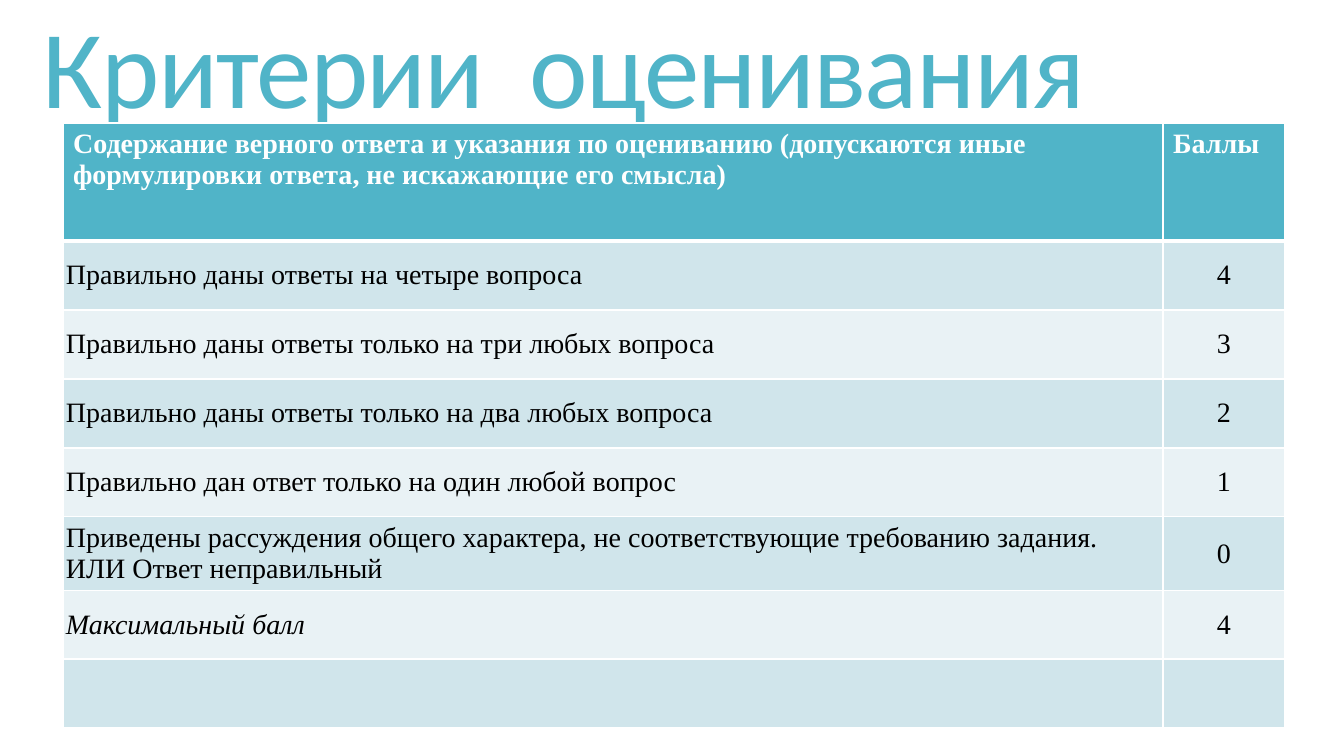
import pptx
import pptx.dml.color
import pptx.enum.text
import pptx.oxml.ns
import pptx.util
import lxml.etree

SCALE = 9071
COLORS = {
    "accent": "50B4C8",
    "band_dark": "D0E5EB",
    "band_light": "E9F2F5",
    "white": "FFFFFF",
    "black": "000000",
}
HEADERS = [
    "Содержание верного ответа и указания по оцениванию "
    "(допускаются иные формулировки ответа, не искажающие его смысла)",
    "Баллы",
]
CRITERIA = [
    (["Правильно даны ответы на четыре вопроса"], "4"),
    (["Правильно даны ответы только на три любых вопроса"], "3"),
    (["Правильно даны ответы только на два любых вопроса"], "2"),
    (["Правильно дан ответ только на один любой вопрос"], "1"),
    (["Приведены рассуждения общего характера, не соответствующие требованию задания.",
      "ИЛИ Ответ неправильный"], "0"),
    (["Максимальный балл"], "4"),
    ([], ""),
]
MAXIMUM_LABEL = "Максимальный балл"


def px(length):
    return pptx.util.Emu(length * SCALE)


def rgb(name):
    return pptx.dml.color.RGBColor.from_string(COLORS[name])


def add_run(paragraph, text, font_name, size, color, bold=False, italic=False):
    run = paragraph.add_run()
    run.text = text
    font = run.font
    font.name = font_name
    font.size = pptx.util.Pt(size)
    font.bold = bold
    font.italic = italic
    font.color.rgb = rgb(color)
    return run


def add_title(slide, left, top, width, height):
    shape = slide.shapes.add_textbox(px(left), px(top), px(width), px(height))
    frame = shape.text_frame
    frame.word_wrap = True
    frame.vertical_anchor = pptx.enum.text.MSO_ANCHOR.BOTTOM
    paragraph = frame.paragraphs[0]
    paragraph.line_spacing = 0.8
    run = add_run(paragraph, "Критерии  оценивания", "Calibri", 79.2, "accent")
    run.font._element.set("spc", "-120")


def style_cell(cell, fill, top_width, bottom_width):
    cell.fill.solid()
    cell.fill.fore_color.rgb = rgb(fill)
    properties = cell._tc.get_or_add_tcPr()
    sides = {"lnL": 1, "lnR": 1, "lnT": top_width, "lnB": bottom_width}
    for position, (side, width) in enumerate(sides.items()):
        line = lxml.etree.Element(pptx.oxml.ns.qn("a:" + side), w=str(pptx.util.Pt(width)))
        solid = lxml.etree.SubElement(line, pptx.oxml.ns.qn("a:solidFill"))
        lxml.etree.SubElement(solid, pptx.oxml.ns.qn("a:srgbClr"), val=COLORS["white"])
        properties.insert(position, line)


def write_cell(cell, lines, color, bold=False, centered=False):
    frame = cell.text_frame
    for index, text in enumerate(lines):
        paragraph = frame.add_paragraph() if index else frame.paragraphs[0]
        if centered:
            paragraph.alignment = pptx.enum.text.PP_ALIGN.CENTER
        add_run(paragraph, text, "Times New Roman", 20, color, bold, text == MAXIMUM_LABEL)


def add_criteria_table(slide, left, top, width, height):
    score_width, header_height = 122, 118
    row_height = (height - header_height) // len(CRITERIA)
    table = slide.shapes.add_table(
        len(CRITERIA) + 1, 2, px(left), px(top), px(width), px(height)).table
    table.columns[0].width = px(width - score_width)
    table.columns[1].width = px(score_width)
    table.rows[0].height = px(header_height)
    for column, text in enumerate(HEADERS):
        cell = table.cell(0, column)
        style_cell(cell, "accent", 1, 3)
        write_cell(cell, [text], "white", bold=True)
    for row, (lines, score) in enumerate(CRITERIA, start=1):
        table.rows[row].height = px(row_height)
        for column, content in enumerate([lines, [score] if score else []]):
            cell = table.cell(row, column)
            cell.margin_left = cell.margin_right = px(3)
            cell.margin_top = cell.margin_bottom = px(3)
            cell.vertical_anchor = pptx.enum.text.MSO_ANCHOR.MIDDLE
            style_cell(cell, "band_dark" if row % 2 else "band_light", 3 if row == 1 else 1, 1)
            write_cell(cell, content, "black", centered=column == 1)


def main():
    presentation = pptx.Presentation()
    presentation.slide_width = px(1344)
    presentation.slide_height = px(756)
    slide = presentation.slides.add_slide(presentation.slide_layouts[6])
    add_title(slide, 33, 23, 1187, 112)
    add_criteria_table(slide, 63, 123, 1222, 601)
    presentation.save("out.pptx")


if __name__ == "__main__":
    main()
